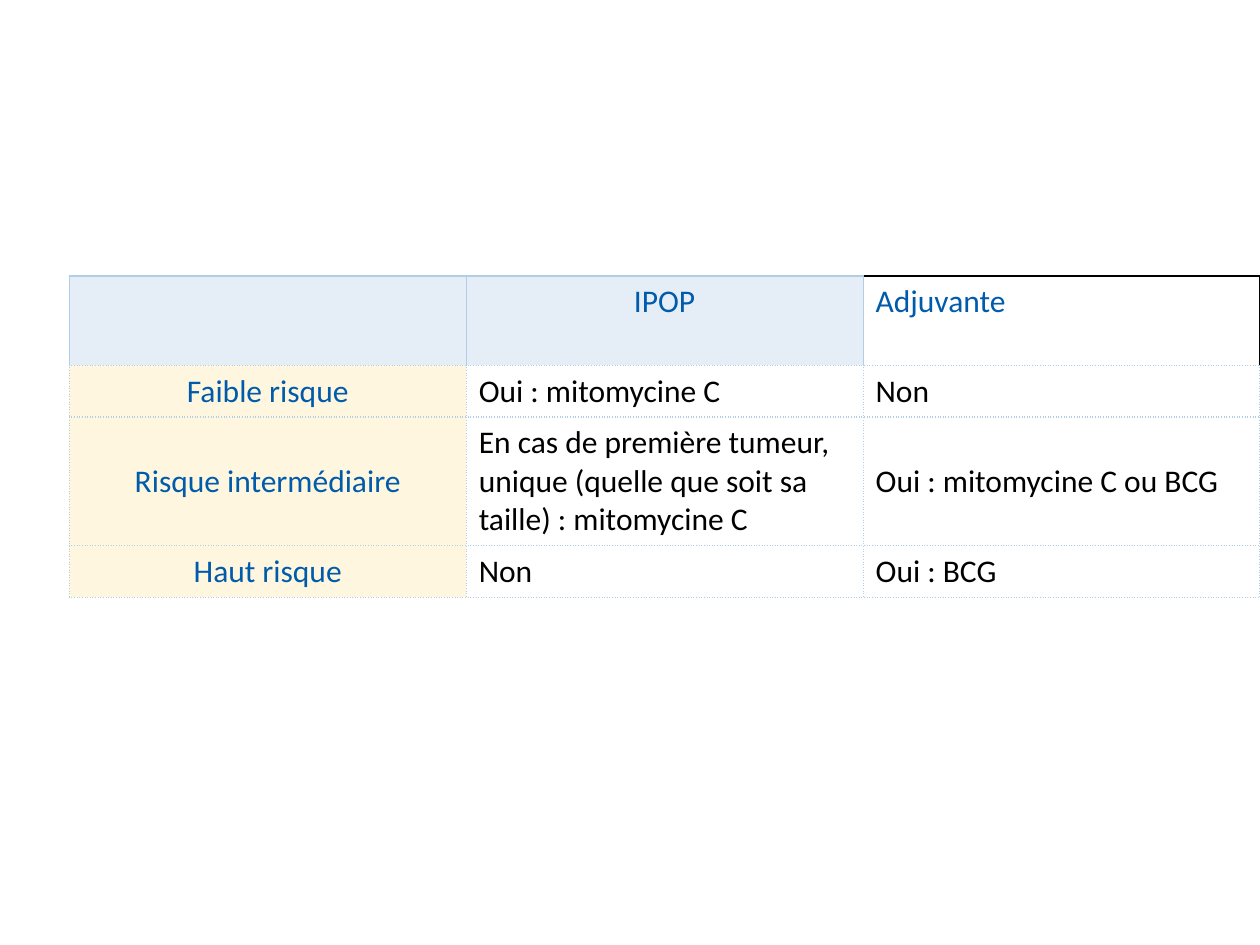
import pptx
import pptx.util
import pptx.dml.color
import pptx.enum.text
import lxml.etree
from pptx.util import Inches

BLUE, BLACK, EDGE = "005BAB", "000000", "B2CDE6"
HEAD, SIDE, WHITE = "E5EEF6", "FEF6DE", "FFFFFF"
ROWS = [
    ("", "IPOP", "Adjuvante"),
    ("Faible risque", "Oui : mitomycine C", "Non"),
    ("Risque intermédiaire",
     "En cas de première tumeur, unique (quelle que soit sa taille) : mitomycine C",
     "Oui : mitomycine C ou BCG"),
    ("Haut risque", "Non", "Oui : BCG"),
]
HEIGHTS = (0.71, 0.41, 1.02, 0.41)
WIDTH = 3.15


def rgb(code):
    return pptx.dml.color.RGBColor.from_string(code)


def add_edge(cell, side, color, dash):
    """Draw one border; call for L, R, T, B in that order, before the fill."""
    tag = "{http://schemas.openxmlformats.org/drawingml/2006/main}"
    props = cell._tc.get_or_add_tcPr()
    line = lxml.etree.SubElement(props, f"{tag}ln{side}", w=str(pptx.util.Pt(0.75)))
    fill = lxml.etree.SubElement(line, f"{tag}solidFill")
    lxml.etree.SubElement(fill, f"{tag}srgbClr", val=color)
    lxml.etree.SubElement(line, f"{tag}prstDash", val=dash)


def style_cell(cell, row, col):
    head, side = row == 0, col == 0
    last = head and col == 2
    for edge in "LRTB":
        color = BLACK if last and edge in "RT" else EDGE
        solid = head and edge != "B"
        add_edge(cell, edge, color, "solid" if solid else "sysDot")
    cell.fill.solid()
    tint = WHITE if last else HEAD if head else SIDE if side else WHITE
    cell.fill.fore_color.rgb = rgb(tint)
    anchor = pptx.enum.text.MSO_ANCHOR
    cell.vertical_anchor = anchor.TOP if head else anchor.MIDDLE


def write_cell(cell, text, row, col):
    cell.text = text
    para = cell.text_frame.paragraphs[0]
    align = pptx.enum.text.PP_ALIGN
    middle = col == 0 or (row == 0 and col == 1)
    para.alignment = align.CENTER if middle else align.LEFT
    para.font.name = "Calibri"
    para.font.size = pptx.util.Pt(18)
    para.font.color.rgb = rgb(BLUE if row == 0 or col == 0 else BLACK)


def add_grid(slide):
    count = len(ROWS[0])
    frame = slide.shapes.add_table(len(ROWS), count, Inches(0.55), Inches(2.19),
                                   Inches(WIDTH * count), Inches(sum(HEIGHTS)))
    table = frame.table
    table.first_row = table.horz_banding = False
    for column in table.columns:
        column.width = Inches(WIDTH)
    for row, texts in enumerate(ROWS):
        table.rows[row].height = Inches(HEIGHTS[row])
        for col, text in enumerate(texts):
            cell = table.cell(row, col)
            style_cell(cell, row, col)
            write_cell(cell, text, row, col)


def main():
    deck = pptx.Presentation()
    deck.slide_width, deck.slide_height = Inches(10), Inches(7.5)
    add_grid(deck.slides.add_slide(deck.slide_layouts[6]))
    deck.save("out.pptx")


if __name__ == "__main__":
    main()
